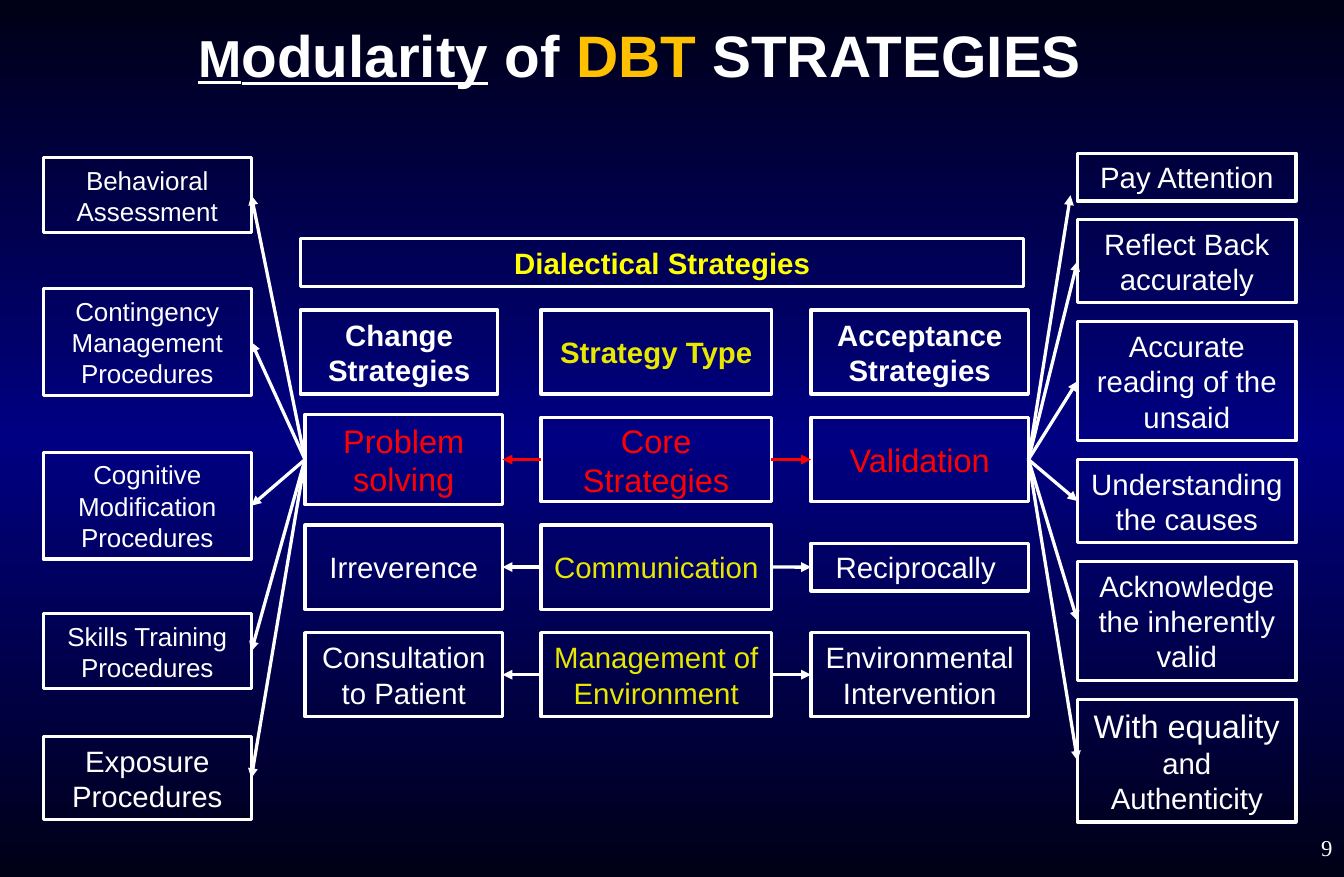
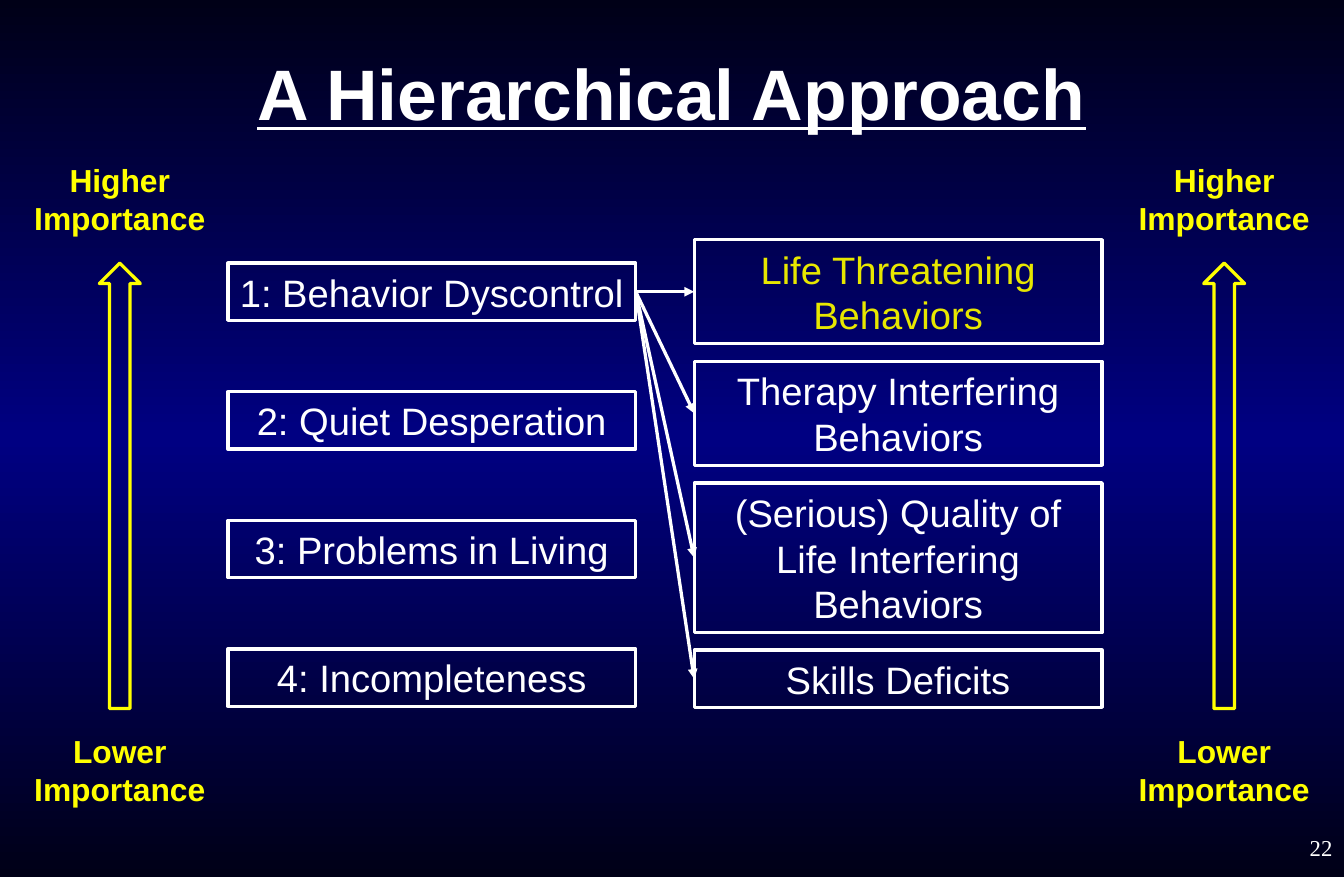
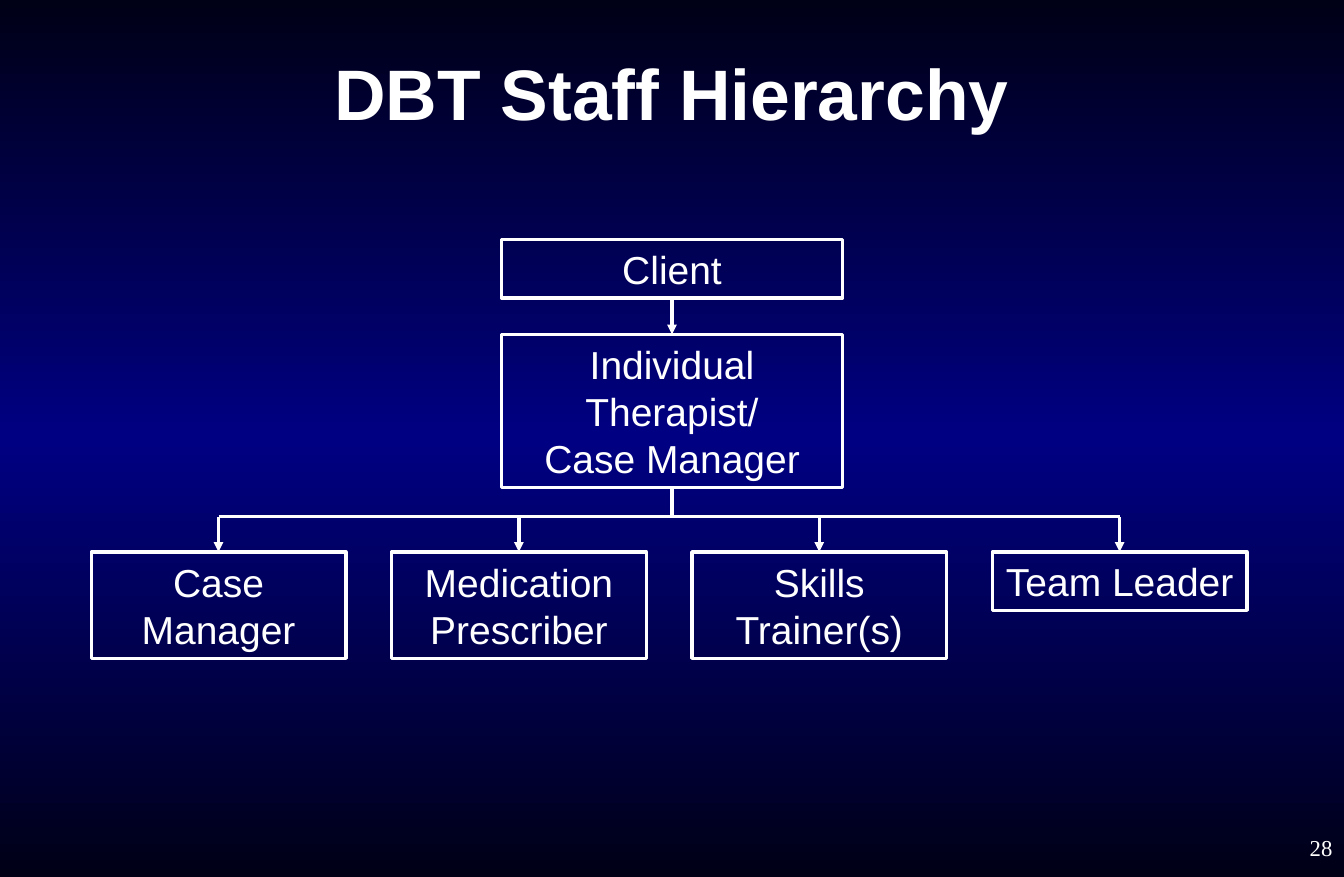
"""Build three slides on DBT strategies, target hierarchy and staff."""
from copy import deepcopy
from dataclasses import dataclass
from typing import NamedTuple

from lxml import etree
from pptx import Presentation
from pptx import util as u
from pptx.dml.color import RGBColor
from pptx.enum import shapes, text
from pptx.oxml.ns import qn
from pptx.shapes.autoshape import Shape
from pptx.shapes.connector import Connector
from pptx.slide import Slide

WHITE, YELLOW, GOLD = "FFFFFF", "FFFF00", "E7E700"
RED, AMBER, NIGHT, NAVY = "FF0000", "FFC000", "000017", "000082"
LINE_WIDTH = u.Pt(2)
TOP, LEFT, BOTTOM, RIGHT = range(4)
BODY = 18.1


class Rect(NamedTuple):
    x: float
    y: float
    w: float
    h: float


class Style(NamedTuple):
    size: float = BODY
    color: str = WHITE
    bold: bool = False
    font: str = "Arial"
    align: text.PP_ALIGN = text.PP_ALIGN.CENTER


class Span(NamedTuple):
    words: str
    size: float = 44
    color: str = WHITE
    underline: bool = False


class Item(NamedTuple):
    words: str
    height: float
    style: Style = Style()


class Pin(NamedTuple):
    shape: Shape
    site: int


class Point(NamedTuple):
    x: float
    y: float


@dataclass(frozen=True)
class Row:
    words: tuple[str, str, str]
    side: Style
    middle: Style
    heights: tuple[float, float, float] = (0.72, 0.72, 0.72)
    left: float = 2.61
    arrows: bool = True


def rgb(color: str) -> RGBColor:
    return RGBColor.from_string(color)


def inches(rect: Rect) -> list[u.Length]:
    return [u.Inches(v) for v in rect]


def write(sp: Shape, words: str, style: Style) -> None:
    tf = sp.text_frame
    tf.word_wrap = True
    tf.vertical_anchor = text.MSO_ANCHOR.MIDDLE
    tf.text = words
    for p in tf.paragraphs:
        p.alignment = style.align
        p.font.name = style.font
        p.font.size = u.Pt(style.size)
        p.font.bold = style.bold
        p.font.color.rgb = rgb(style.color)


def label(s: Slide, rect: Rect, words: str, style: Style) -> Shape:
    sp = s.shapes.add_textbox(*inches(rect))
    write(sp, words, style)
    return sp


def outline(s: Slide, kind: shapes.MSO_SHAPE, rect: Rect, color: str = WHITE) -> Shape:
    sp = s.shapes.add_shape(kind, *inches(rect))
    sp.shadow.inherit = False
    sp.fill.background()
    sp.line.color.rgb = rgb(color)
    sp.line.width = LINE_WIDTH
    return sp


def box(s: Slide, rect: Rect, words: str, style: Style = Style()) -> Shape:
    sp = outline(s, shapes.MSO_SHAPE.RECTANGLE, rect)
    write(sp, words, style)
    return sp


def stack(s: Slide, x: float, y: float, w: float, gap: float, items: list[Item]) -> list[Shape]:
    drawn = []
    for item in items:
        drawn.append(box(s, Rect(x, y, w, item.height), item.words, item.style))
        y += item.height + gap
    return drawn


def link(s: Slide, start: Pin | Point, end: Pin | Point,
         color: str = WHITE, arrow: bool = True) -> Connector:
    ends = [u.Inches(v) for e in (start, end) for v in (e if isinstance(e, Point) else (0, 0))]
    cn = s.shapes.add_connector(shapes.MSO_CONNECTOR.STRAIGHT, *ends)
    if isinstance(start, Pin):
        cn.begin_connect(start.shape, start.site)
    if isinstance(end, Pin):
        cn.end_connect(end.shape, end.site)
    cn.line.color.rgb = rgb(color)
    cn.line.width = LINE_WIDTH
    sp_pr = cn._element.spPr
    if arrow:
        etree.SubElement(sp_pr.find(qn("a:ln")), qn("a:tailEnd"), type="triangle")
    etree.SubElement(sp_pr, qn("a:effectLst"))
    return cn


def title(s: Slide, spans: list[Span], rect: Rect = Rect(0, 0, 11.5, 1.58)) -> None:
    sp = label(s, rect, "", Style(bold=True))
    p = sp.text_frame.paragraphs[0]
    for span in spans:
        r = p.add_run()
        r.text = span.words
        r.font.size = u.Pt(span.size)
        r.font.underline = span.underline
        r.font.color.rgb = rgb(span.color)
        effects = etree.SubElement(r._r.get_or_add_rPr(), qn("a:effectLst"))
        shadow = etree.SubElement(effects, qn("a:outerShdw"), blurRad="38100",
                                  dist="38100", dir="2700000", algn="tl")
        etree.SubElement(shadow, qn("a:srgbClr"), val="000000")


def new_slide(prs: Presentation, number: int) -> Slide:
    s = prs.slides.add_slide(prs.slide_layouts[6])
    label(s, Rect(9.1, 7, 2.4, 0.5), str(number),
          Style(14, font="Times New Roman", align=text.PP_ALIGN.RIGHT))
    return s


def paint_background(prs: Presentation) -> None:
    fill = prs.slide_master.background.fill
    fill.gradient()
    fill.gradient_angle = 90
    gs = fill.gradient_stops[0]._gs
    gs.getparent().append(deepcopy(gs))
    for stop, position, color in zip(fill.gradient_stops, (0, 0.5, 1), (NIGHT, NAVY, NIGHT)):
        stop.position = position
        stop.color.rgb = rgb(color)


def strategies(prs: Presentation) -> None:
    s = new_slide(prs, 9)
    title(s, [Span("M", 32, underline=True), Span("odularity", 36, underline=True),
              Span(" of ", 36), Span("DBT ", 36, AMBER), Span("STRATEGIES", 36)],
          Rect(-0.42, -0.33, 11.79, 1.58))
    box(s, Rect(2.57, 2.04, 6.19, 0.41), "Dialectical Strategies", Style(color=YELLOW, bold=True))

    red, gold = Style(20, RED), Style(color=GOLD)
    rows = [
        Row(("Change Strategies", "Strategy Type", "Acceptance Strategies"),
            Style(bold=True), Style(color=GOLD, bold=True), left=2.57, arrows=False),
        Row(("Problem solving", "Core Strategies", "Validation"), red, red, (0.77, 0.72, 0.72)),
        Row(("Irreverence", "Communication", "Reciprocally "), Style(), gold, (0.72, 0.72, 0.41)),
        Row(("Consultation to Patient", "Management of Environment",
             "Environmental Intervention"), Style(), gold),
    ]
    grid = []
    for i, row in enumerate(rows):
        middle_y = 3.01 + 0.92 * i
        columns = zip((row.left, 4.63, 6.94), (1.69, 1.97, 1.86), row.heights,
                      row.words, (row.side, row.middle, row.side))
        cells = [box(s, Rect(x, middle_y - h / 2, w, h), words, style)
                 for x, w, h, words, style in columns]
        grid.append(cells)
        if row.arrows:
            color = RED if row.side == red else WHITE
            link(s, Pin(cells[1], LEFT), Pin(cells[0], RIGHT), color)
            link(s, Pin(cells[1], RIGHT), Pin(cells[2], LEFT), color)
    solving, _, validation = grid[1]

    small = Style(16)
    for y, item in [
        (1.35, Item("Behavioral Assessment", 0.64, small)),
        (2.47, Item("Contingency Management Procedures", 0.91, small)),
        (3.87, Item("Cognitive Modification Procedures", 0.91, small)),
        (5.25, Item("Skills Training Procedures", 0.64, small)),
        (6.3, Item("Exposure Procedures", 0.71)),
    ]:
        sp = box(s, Rect(0.37, y, 1.78, item.height), item.words, item.style)
        link(s, Pin(solving, LEFT), Pin(sp, RIGHT))

    _, *levels = stack(s, 9.22, 1.31, 1.87, 0.16, [
        Item("Pay Attention", 0.41),
        Item("Reflect Back accurately", 0.71),
        Item("Accurate reading of the unsaid", 1.02),
        Item("Understanding the causes", 0.71),
        Item("Acknowledge the inherently valid", 1.02),
        Item("With equality ", 1.05, Style(20)),
    ])
    r = levels[-1].text_frame.paragraphs[0].add_run()
    r.text = "and Authenticity"
    r.font.size = u.Pt(BODY)
    link(s, Pin(validation, RIGHT), Point(9.16, 1.67))
    for sp in levels:
        link(s, Pin(validation, RIGHT), Pin(sp, LEFT))


def hierarchy(prs: Presentation) -> None:
    s = new_slide(prs, 22)
    title(s, [Span("A Hierarchical Approach", underline=True)])
    style = Style(23.5)
    stages = stack(s, 1.95, 2.25, 3.49, 0.61, [Item(words, 0.49, style) for words in (
        "1: Behavior Dyscontrol", "2: Quiet Desperation",
        "3: Problems in Living", "4: Incompleteness")])
    targets = stack(s, 5.94, 2.05, 3.49, 0.15, [
        Item("Life Threatening Behaviors", 0.89, Style(23.5, GOLD)),
        Item("Therapy Interfering Behaviors", 0.89, style),
        Item("(Serious) Quality of Life Interfering Behaviors", 1.28, style),
        Item("Skills Deficits", 0.49, style),
    ])
    for sp in targets:
        link(s, Pin(stages[0], RIGHT), Pin(sp, LEFT))
    for x in (0.13, 9.58):
        for y, words in ((1.32, "Higher Importance"), (6.2, "Lower Importance")):
            label(s, Rect(x, y, 1.79, 0.76), words, Style(19.6, YELLOW, True))
        outline(s, shapes.MSO_SHAPE.UP_ARROW, Rect(x + 0.72, 2.25, 0.35, 3.81), YELLOW)


def staff(prs: Presentation) -> None:
    s = new_slide(prs, 28)
    title(s, [Span("DBT Staff Hierarchy")])
    style = Style(24)
    client, therapist = stack(s, 4.29, 2.05, 2.92, 0.31, [
        Item("Client", 0.5, style),
        Item("Individual Therapist/\nCase Manager", 1.31, style),
    ])
    link(s, Pin(client, BOTTOM), Pin(therapist, TOP))
    bus_y, pitch, width, left = 4.42, 2.57, 2.18, 0.78
    first = left + width / 2
    link(s, Pin(therapist, BOTTOM), Point(5.75, bus_y), arrow=False)
    link(s, Point(first, bus_y), Point(first + 3 * pitch, bus_y), arrow=False)
    for i, (words, h) in enumerate([("Case Manager", 0.91), ("Medication Prescriber", 0.91),
                                    ("Skills Trainer(s)", 0.91), ("Team Leader", 0.5)]):
        sp = box(s, Rect(left + pitch * i, 4.72, width, h), words, style)
        link(s, Point(first + pitch * i, bus_y), Pin(sp, TOP))


def main() -> None:
    prs = Presentation()
    prs.slide_width, prs.slide_height = u.Inches(11.5), u.Inches(7.5)
    paint_background(prs)
    strategies(prs)
    hierarchy(prs)
    staff(prs)
    prs.save("out.pptx")


if __name__ == "__main__":
    main()
